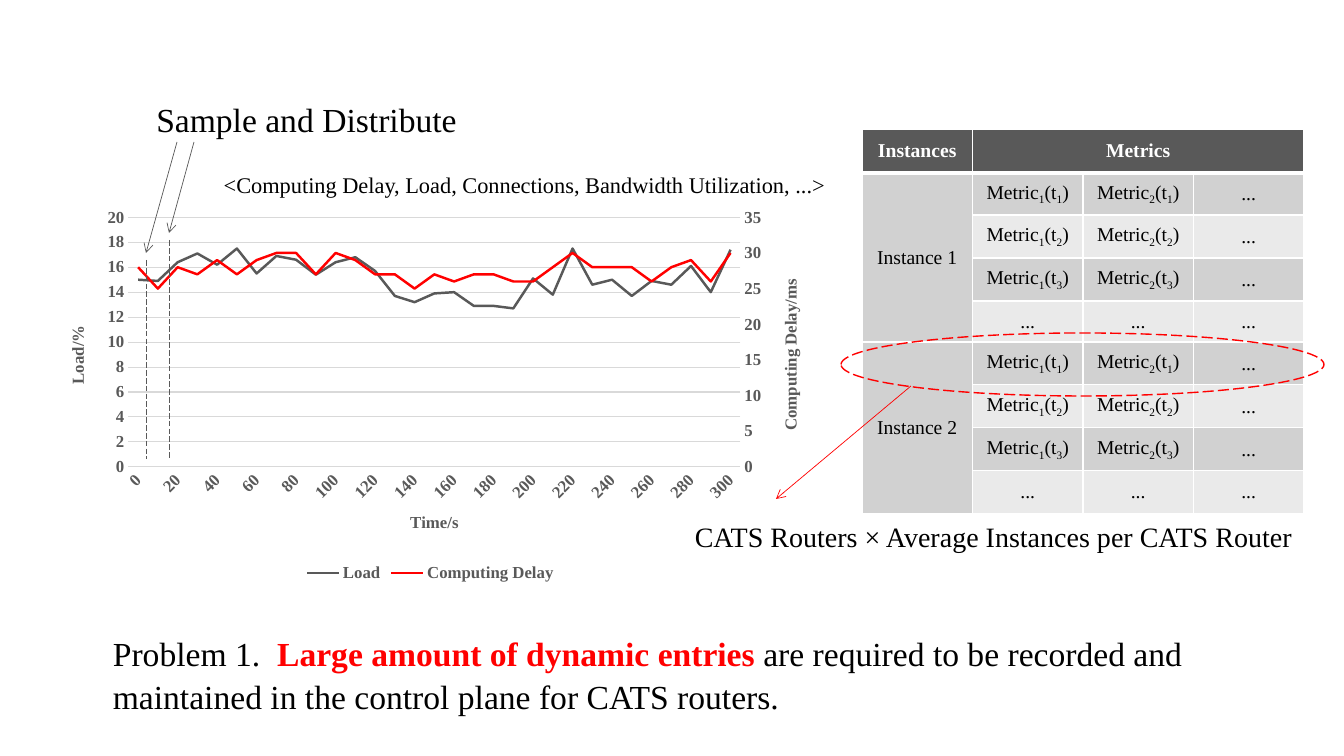
from copy import deepcopy

from lxml.etree import SubElement
from pptx import Presentation
from pptx.chart.data import CategoryChartData
from pptx.dml.color import RGBColor
from pptx.enum.chart import XL_CHART_TYPE as ChartType, XL_LEGEND_POSITION as LegendPos, XL_TICK_MARK as Tick
from pptx.enum.dml import MSO_LINE as Dash
from pptx.enum.shapes import MSO_CONNECTOR as Connector, MSO_SHAPE as Shape
from pptx.enum.text import MSO_ANCHOR as Anchor, MSO_AUTO_SIZE as AutoSize, PP_ALIGN as Align
from pptx.oxml import parse_xml
from pptx.oxml.ns import qn
from pptx.util import Emu, Pt

GREY, RED, BLACK, WHITE, PALE = "595959", "FF0000", "000000", "FFFFFF", "D9D9D9"
BANDS = ["D1D1D1", "EAEAEA"]
CHART_NS = 'xmlns:c="http://schemas.openxmlformats.org/drawingml/2006/chart"'
DRAW_NS = 'xmlns:a="http://schemas.openxmlformats.org/drawingml/2006/main"'


def px(length):
    return Emu(round(length * 914400 / 100.8))


def rgb(value):
    return RGBColor.from_string(value)


def assign(target, values):
    for name, value in values.items():
        setattr(target, name, value)


class MetricsSlide:
    """Draws styled elements on one blank slide."""

    font_name = "Times New Roman"

    def __init__(self, deck):
        self.shapes = deck.slides.add_slide(deck.slide_layouts[6]).shapes

    def font(self, font, size, color=BLACK, bold=False):
        assign(font, {"name": self.font_name, "size": Pt(size), "bold": bold})
        font.color.rgb = rgb(color)

    def stroke(self, line, color, width, dash=None):
        line.color.rgb = rgb(color)
        assign(line, {"width": Pt(width), "dash_style": dash})

    def add_runs(self, paragraph, runs, size, align=Align.CENTER):
        paragraph.alignment = align
        for words, color, bold, baseline in runs:
            run = paragraph.add_run()
            run.text = words
            self.font(run.font, size, color, bold)
            if baseline:
                run.font._element.set("baseline", str(baseline))

    def text(self, box, runs, size, align=Align.CENTER):
        frame = self.shapes.add_textbox(*map(px, box)).text_frame
        assign(frame, {"word_wrap": True, "auto_size": AutoSize.SHAPE_TO_FIT_TEXT})
        paragraph = frame.paragraphs[0]
        paragraph.line_spacing = 1.06
        self.add_runs(paragraph, runs, size, align)

    def line(self, start, end, color=GREY, dash=None, arrow=False):
        connector = self.shapes.add_connector(Connector.STRAIGHT, *map(px, start + end))
        self.stroke(connector.line, color, 0.5, dash)
        properties = connector._element.spPr
        if arrow:
            SubElement(properties.find(qn("a:ln")), qn("a:tailEnd"), type="arrow")
        SubElement(properties, qn("a:effectLst"))

    def ellipse(self, box, color):
        ring = self.shapes.add_shape(Shape.OVAL, *map(px, box))
        ring.shadow.inherit = False
        ring.fill.background()
        self.stroke(ring.line, color, 1, Dash.LONG_DASH)

    def cell(self, cell, runs, fill, bottom=1):
        cell.fill.solid()
        cell.fill.fore_color.rgb = rgb(fill)
        cell.vertical_anchor = Anchor.MIDDLE
        self.add_runs(cell.text_frame.paragraphs[0], runs, 14)
        for index, (side, width) in enumerate({"L": 1, "R": 1, "T": 1, "B": bottom}.items()):
            cell._tc.tcPr.insert(index, parse_xml(
                f'<a:ln{side} {DRAW_NS} w="{int(Pt(width))}"><a:solidFill>'
                f'<a:srgbClr val="{WHITE}"/></a:solidFill></a:ln{side}>'))

    def table(self, box, heights, instances):
        table = self.shapes.add_table(len(heights), 4, *map(px, box)).table
        assign(table, {"first_row": False, "horz_banding": False})
        for column in table.columns:
            column.width = px(box[2] / 4)
        for row, height in zip(table.rows, heights):
            row.height = px(height)
        table.cell(0, 1).merge(table.cell(0, 3))
        for column, heading in enumerate(["Instances", "Metrics", "", ""]):
            self.cell(table.cell(0, column), [(heading, WHITE, True, 0)] if heading else [], GREY, 3)
        for group, instance in enumerate(instances):
            top = 1 + 4 * group
            table.cell(top, 0).merge(table.cell(top + 3, 0))
            for offset in range(4):
                label = [plain(instance)] if offset == 0 else []
                self.cell(table.cell(top + offset, 0), label, BANDS[0])
                for column in (1, 2, 3):
                    known = offset < 3 and column < 3
                    runs = metric(column, offset + 1) if known else [plain("...")]
                    self.cell(table.cell(top + offset, column), runs, BANDS[offset % 2])

    def axis(self, axis, title, rotation, **scale):
        assign(axis, {"major_tick_mark": Tick.NONE, "minor_tick_mark": Tick.NONE, **scale})
        self.font(axis.tick_labels.font, 12, GREY, True)
        frame = axis.axis_title.text_frame
        frame.text = title
        self.font(frame.paragraphs[0].runs[0].font, 12, GREY, True)
        assign_xml(frame._txBody.bodyPr, rot=rotation, vert="horz")

    def chart(self, box, categories, series):
        data = CategoryChartData()
        data.categories = categories
        for name, (values, _) in series.items():
            data.add_series(name, values)
        chart = self.shapes.add_chart(ChartType.LINE, *map(px, box), data).chart
        assign(chart, {"has_title": False, "has_legend": True})
        self.font(chart.font, 12, BLACK, True)
        assign(chart.legend, {"position": LegendPos.BOTTOM, "include_in_layout": False})
        self.font(chart.legend.font, 12, GREY, True)
        for curve, (_, color) in zip(chart.plots[0].series, series.values()):
            curve.smooth = False
            self.stroke(curve.format.line, color, 1.75)
        chart.plots[0].vary_by_categories = False
        time, load = chart.category_axis, chart.value_axis
        self.axis(time, "Time/s", 0)
        self.stroke(time.format.line, PALE, 0.75)
        assign_xml(time._element.find(qn("c:txPr")).find(qn("a:bodyPr")), rot=-2700000, vert="horz")
        skip = parse_xml(f'<c:tickLblSkip {CHART_NS} val="2"/>')
        time._element.find(qn("c:noMultiLvlLbl")).addprevious(skip)
        self.axis(load, "Load/%", -5400000, minimum_scale=0, maximum_scale=20, major_unit=2)
        load.format.line.fill.background()
        self.stroke(load.major_gridlines.format.line, PALE, 0.75)
        self.right_axis(chart, "Computing Delay/ms", 35, 5)
        plot = chart._chartSpace.chart.plotArea
        for old in plot.findall(qn("c:layout")):
            plot.remove(old)
        places = {"x": 0.11, "y": 0.04, "w": 0.79, "h": 0.65}
        plot.insert(0, parse_xml(
            f'<c:layout {CHART_NS}><c:manualLayout><c:layoutTarget val="inner"/>'
            '<c:xMode val="edge"/><c:yMode val="edge"/>'
            + "".join(f'<c:{key} val="{value}"/>' for key, value in places.items())
            + '</c:manualLayout></c:layout>'))
        chart._chartSpace.chart.addnext(parse_xml(
            f'<c:spPr {CHART_NS} {DRAW_NS}><a:solidFill><a:srgbClr val="{WHITE}"/>'
            '</a:solidFill><a:ln><a:noFill/></a:ln></c:spPr>'))

    def right_axis(self, chart, title, maximum, unit):
        left = chart.plots[0]._element
        time, load = chart.category_axis._element, chart.value_axis._element
        right, hidden, delay = map(deepcopy, (left, time, load))
        left.remove(left.findall(qn("c:ser"))[1])
        right.remove(right.findall(qn("c:ser"))[0])
        left.addnext(right)
        load.addnext(delay)
        delay.addnext(hidden)
        for mark, number in zip(right.findall(qn("c:axId")), ("5001", "5002")):
            mark.set("val", number)
        for axis, own, other in ((hidden, "5001", "5002"), (delay, "5002", "5001")):
            axis.find(qn("c:axId")).set("val", own)
            axis.find(qn("c:crossAx")).set("val", other)
        hidden.find(qn("c:delete")).set("val", "1")
        hidden.remove(hidden.find(qn("c:title")))
        delay.remove(delay.find(qn("c:majorGridlines")))
        next(delay.iter(qn("a:t"))).text = title
        changes = {"axPos": "r", "crosses": "max", "majorUnit": unit}
        for tag, value in changes.items():
            delay.find(qn(f"c:{tag}")).set("val", str(value))
        next(delay.iter(qn("c:max"))).set("val", str(maximum))


def assign_xml(element, **values):
    for name, value in values.items():
        element.set(name, str(value))


def plain(words):
    return words, BLACK, False, 0


def metric(number, moment):
    parts = [("Metric", 0), (str(number), -25000), ("(t", 0), (str(moment), -25000), (")", 0)]
    return [(words, BLACK, False, baseline) for words, baseline in parts]


def main():
    deck = Presentation()
    assign(deck, {"slide_width": px(1344), "slide_height": px(756)})
    slide = MetricsSlide(deck)
    load = [15, 14.9, 16.4, 17.1, 16.2, 17.5, 15.5, 16.9, 16.6, 15.4, 16.4, 16.8, 15.7, 13.7, 13.2, 13.9,
            14, 12.9, 12.9, 12.7, 15.1, 13.8, 17.5, 14.6, 15, 13.7, 14.9, 14.6, 16.1, 14, 17.4]
    delay = [28, 25, 28, 27, 29, 27, 29, 30, 30, 27, 30, 29, 27, 27, 25, 27,
             26, 27, 27, 26, 26, 28, 30, 28, 28, 28, 26, 28, 29, 26, 30]
    slide.chart((43, 202, 775, 384), [str(second) for second in range(0, 301, 10)],
                {"Load": (load, GREY), "Computing Delay": (delay, RED)})
    for sample, top, tail in ((146, 260, 177), (169, 240, 194)):
        slide.line((sample, top), (sample, 459), dash=Dash.LONG_DASH)
        slide.line((tail, 142), (sample, top - 7), arrow=True)
    slide.text((94, 92, 425, 50), [plain("Sample and Distribute")], 24)
    slide.text((103, 626, 1138, 92), [
        plain("Problem 1.  "), ("Large amount of dynamic entries ", RED, True, 0),
        plain("are required to be recorded and maintained in the control plane for CATS routers.")],
        24, Align.LEFT)
    slide.text((169, 165, 711, 37),
               [plain("<Computing Delay, Load, Connections, Bandwidth Utilization, ...>")], 16)
    slide.table((862, 129, 442, 385), [44, 42, 43, 43, 41, 43, 43, 43, 43], ["Instance 1", "Instance 2"])
    slide.ellipse((841, 333, 483, 63), RED)
    slide.text((664, 513, 659, 44), [plain("CATS Routers × Average Instances per CATS Router")], 20)
    slide.line((911, 386), (776, 499), RED, arrow=True)
    deck.save("out.pptx")


if __name__ == "__main__":
    main()
